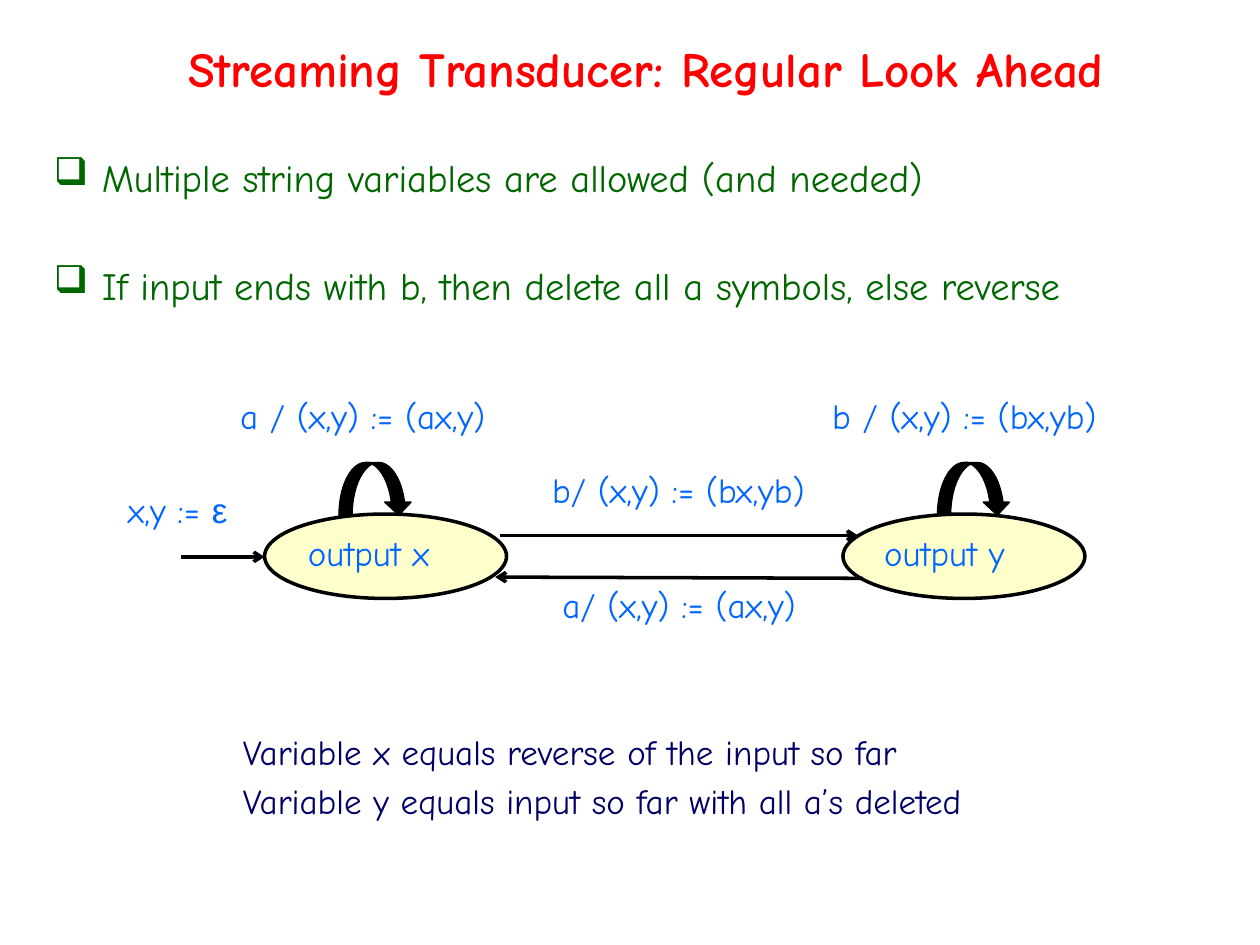
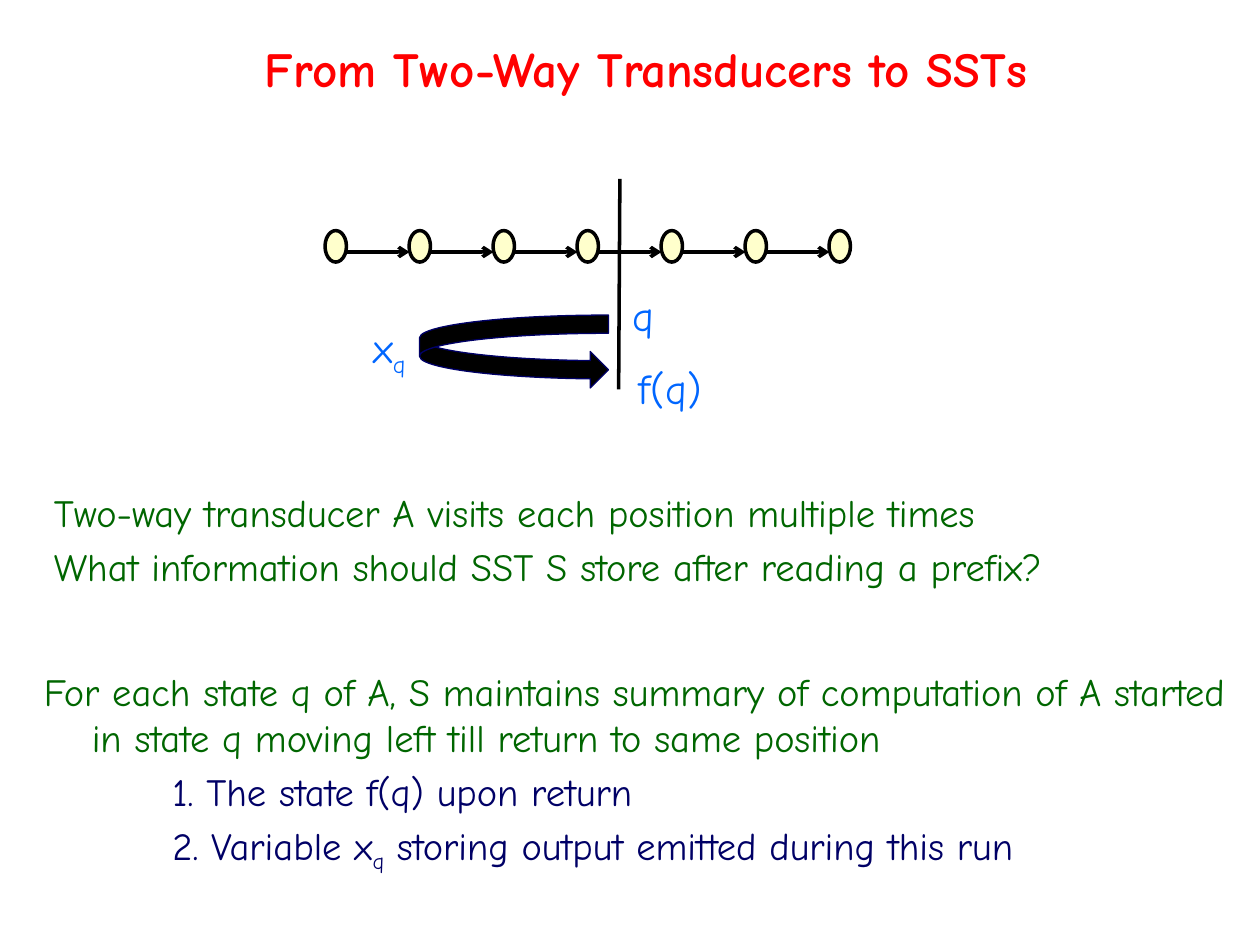
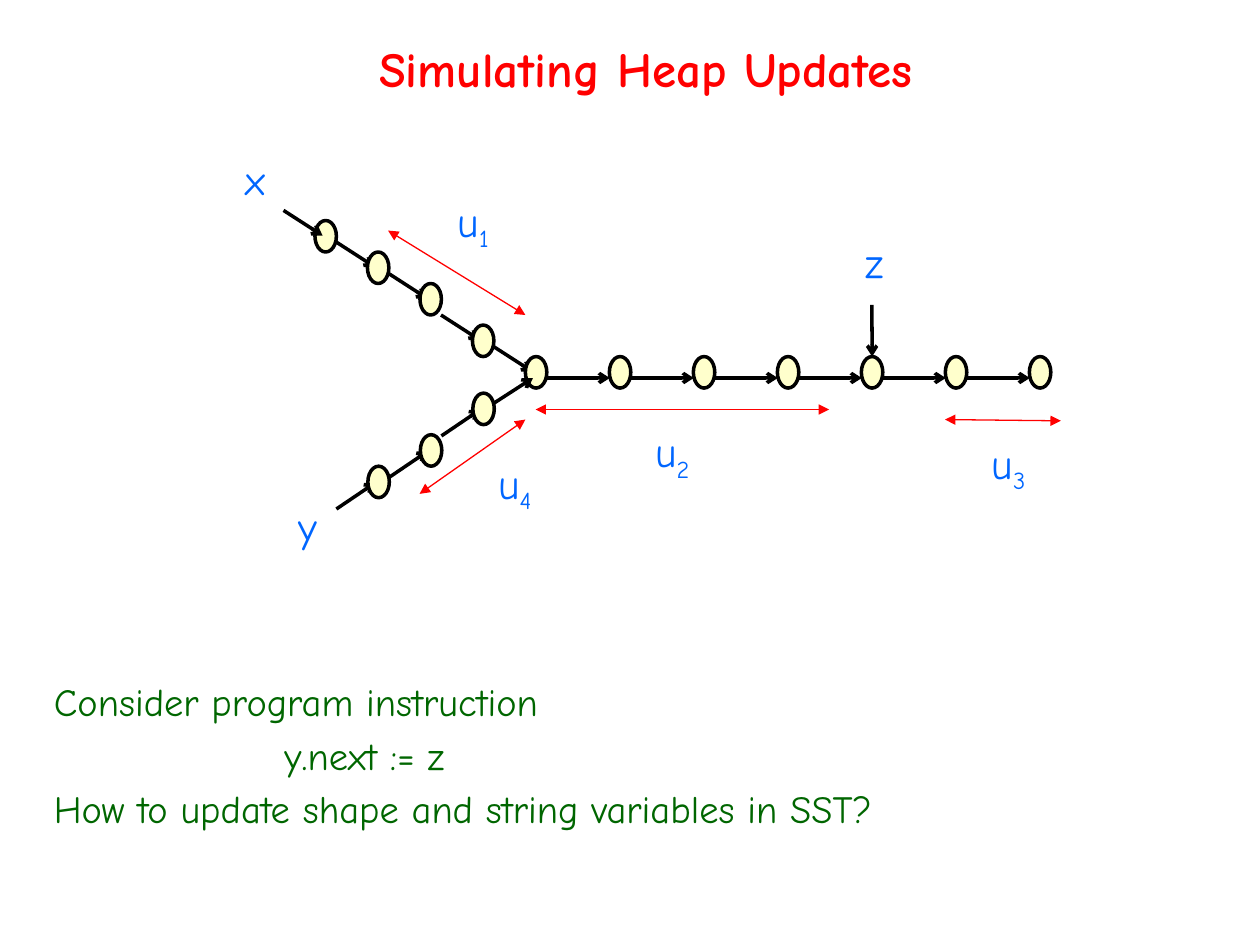
from dataclasses import dataclass

from lxml.etree import SubElement
from pptx import Presentation
from pptx.dml.color import RGBColor
from pptx.enum.shapes import MSO_CONNECTOR, MSO_SHAPE
from pptx.enum.text import MSO_ANCHOR, MSO_AUTO_SIZE, PP_ALIGN
from pptx.oxml.ns import qn
from pptx.util import Inches, Pt


@dataclass(frozen=True)
class Theme:
    font: str = "Comic Neue"
    greek: str = "Arial"
    red: RGBColor = RGBColor(0xFF, 0, 0)
    green: RGBColor = RGBColor(0, 0x66, 0)
    blue: RGBColor = RGBColor(0, 0x66, 0xFF)
    navy: RGBColor = RGBColor(0, 0, 0x66)
    black: RGBColor = RGBColor(0, 0, 0)
    cream: RGBColor = RGBColor(0xFF, 0xFF, 0xCC)
    title: int = 28
    large: int = 24
    body: int = 22
    small: int = 20
    thick: float = 2
    thin: float = 0.75


theme = Theme()


def add_text(slide, box, lines, size, color, label=False):
    frame = slide.shapes.add_textbox(*map(Inches, box)).text_frame
    frame.word_wrap = not label
    for count, line in enumerate(lines):
        para = frame.paragraphs[0] if count == 0 else frame.add_paragraph()
        if label:
            para.alignment = PP_ALIGN.CENTER
        else:
            para.space_before = Pt(size * 0.2)
            props = para._p.get_or_add_pPr()
            props.set("marL", str(Inches(0.38)))
            props.set("indent", str(Inches(-0.38)))
        for piece in line.split("|"):
            run = para.add_run()
            run.text = piece.lstrip("_")
            run.font.name = theme.greek if piece == "ε" else theme.font
            run.font.size = Pt(size)
            run.font.color.rgb = color
            if piece.startswith("_"):
                run.font._element.set("baseline", "-25000")
    return frame.paragraphs


def add_link(slide, start, end, color=theme.black, width=theme.thick, head=None, tail="arrow"):
    link = slide.shapes.add_connector(MSO_CONNECTOR.STRAIGHT, *map(Inches, (*start, *end)))
    link.line.color.rgb = color
    link.line.width = Pt(width)
    props = link._element.spPr
    for tag, tip in (("a:headEnd", head), ("a:tailEnd", tail)):
        if tip:
            SubElement(props.find(qn("a:ln")), qn(tag)).set("type", tip)
    SubElement(props, qn("a:effectLst"))
    return link


deck = Presentation()
deck.slide_width, deck.slide_height = Inches(10), Inches(7.5)

slides = []
for text in (
    "Streaming Transducer: Regular Look Ahead",
    "From Two-Way Transducers to SSTs",
    "Simulating Heap Updates",
):
    slide = deck.slides.add_slide(deck.slide_layouts[5])
    title = slide.shapes.title
    title.left, title.top = Inches(0.25), Inches(0.25)
    title.width, title.height = Inches(9.75), Inches(0.58)
    frame = title.text_frame
    frame.text = text
    frame.auto_size = MSO_AUTO_SIZE.NONE
    frame.vertical_anchor = MSO_ANCHOR.MIDDLE
    para = frame.paragraphs[0]
    para.alignment = PP_ALIGN.CENTER
    font = para.runs[0].font
    font.name, font.size, font.bold = theme.font, Pt(theme.title), True
    font.color.rgb = theme.red
    slides.append(slide)
look, sweep, heap = slides

nodes = []
bends = []

for left in (2.1, 6.69):
    box = map(Inches, (left, 4.08, 1.92, 0.67))
    nodes.append(look.shapes.add_shape(MSO_SHAPE.OVAL, *box))
    box = map(Inches, (left + 0.59 if left < 5 else left + 0.75, 3.67, 0.58, 0.42))
    bend = look.shapes.add_shape(MSO_SHAPE.CURVED_UP_ARROW, *box)
    bends.append((bend, ("flipV",), theme.black))

for start, end in (
    ((1.44, 4.42), (2.1, 4.42)),
    ((3.97, 4.25), (6.81, 4.25)),
    ((6.85, 4.59), (3.93, 4.58)),
):
    add_link(look, start, end)

for left, top, width, text in (
    (2.28, 4.17, 1.29, "output x"),
    (6.86, 4.17, 1.27, "output y"),
    (1.7, 3.08, 2.36, "a / (x,y) := (ax,y)"),
    (6.37, 3.08, 2.57, "b / (x,y) := (bx,yb)"),
    (0.86, 3.83, 1.1, "x,y := |ε"),
    (4.14, 3.67, 2.49, "b/ (x,y) := (bx,yb)"),
    (4.25, 4.58, 2.28, "a/ (x,y) := (ax,y)"),
):
    add_text(look, (left, top, width, 0.43), [text], theme.small, theme.blue, True)

points = add_text(look, (0.33, 1.17, 9.67, 2.33), [
    "Multiple string variables are allowed (and needed)",
    "If input ends with b, then delete all a symbols, else reverse",
], theme.body, theme.green)
for para in points:
    SubElement(para._p.get_or_add_pPr(), qn("a:buChar")).set("char", "❑")
points[1].space_before = Pt(35.3)

add_text(look, (1.83, 5.75, 6.83, 1), [
    "Variable x equals reverse of the input so far",
    "Variable y equals input so far with all a’s deleted",
], theme.small, theme.navy)

step = 5 / 12
upper = [(2.5 + step * i, top) for i, top in enumerate((1.75, 2, 2.25, 2.58, 2.83))]
lower = [(2.92 + step * i, top) for i, top in enumerate((3.7, 3.45, 3.12))]
for left, top in upper[1:]:
    add_link(heap, (left - 0.25, top - 0.08), (left + 0.06, top + 0.12))
for left, top in lower:
    add_link(heap, (left - 0.25, top + 0.34), (left + 0.06, top + 0.13))
for left, top in upper[:-1] + lower:
    box = map(Inches, (left, top, 0.17, 0.25))
    nodes.append(heap.shapes.add_shape(MSO_SHAPE.OVAL, *box))

for slide, first, top in ((sweep, 2.58, 1.83), (heap, 4.17, 2.83)):
    spots = [first + i * 2 / 3 for i in range(7)]
    for left in spots[:-1]:
        add_link(slide, (left + 0.17, top + 0.17), (left + 0.67, top + 0.17))
    for left in spots:
        box = map(Inches, (left, top, 0.17, 0.25))
        nodes.append(slide.shapes.add_shape(MSO_SHAPE.OVAL, *box))

add_link(sweep, (4.92, 1.42), (4.91, 3.09), tail=None)
box = map(Inches, (3.79, 2.04, 0.58, 1.5))
bend = sweep.shapes.add_shape(MSO_SHAPE.CURVED_UP_ARROW, *box)
bend.rotation = 270
bends.append((bend, ("flipH", "flipV"), theme.navy))

add_text(sweep, (0.33, 3.83, 9.5, 1.08), [
    "Two-way transducer A visits each position multiple times",
    "What information should SST S store after reading a prefix?",
], theme.body, theme.green)
steps = add_text(sweep, (0.25, 5.25, 9.75, 1.92), [
    "For each state q of A, S maintains summary of computation of A started "
    "in state q moving left till return to same position",
    "1. The state f(q) upon return",
    "2. Variable x|_q| storing output emitted during this run",
], theme.body, theme.green)
for para in steps[1:]:
    para._p.pPr.set("marL", str(Inches(1.02)))
    para._p.pPr.set("indent", "0")
    for run in para.runs:
        run.font.color.rgb = theme.navy

add_link(heap, (2.25, 1.67), (2.56, 1.87))
add_link(heap, (3.92, 3.2), (4.23, 3))
add_link(heap, (6.92, 2.42), (6.92, 2.83)).end_connect(nodes[-3], 0)
for start, end in (
    ((3.08, 1.83), (4.17, 2.5)),
    ((4.25, 3.25), (6.58, 3.25)),
    ((7.5, 3.33), (8.42, 3.34)),
    ((3.33, 3.92), (4.17, 3.33)),
):
    add_link(heap, start, end, theme.red, theme.thin, "triangle", "triangle")

code = add_text(heap, (0.33, 5.33, 9.67, 1.83), [
    "Consider program instruction",
    "y.next := z",
    "How to update shape and string variables in SST?",
], theme.body, theme.green)[1]
code._p.pPr.set("marL", str(Inches(1.83)))
code._p.pPr.set("indent", "0")

for slide, left, top, width, text in (
    (sweep, 4.92, 2.25, 0.38, "q"),
    (sweep, 4.92, 2.83, 0.8, "f(q)"),
    (sweep, 2.83, 2.5, 0.52, "x|_q"),
    (heap, 1.83, 1.17, 0.4, "x"),
    (heap, 2.25, 3.92, 0.38, "y"),
    (heap, 6.75, 1.83, 0.38, "z"),
    (heap, 3.5, 1.5, 0.51, "u|_1"),
    (heap, 5.08, 3.33, 0.51, "u|_2"),
    (heap, 7.75, 3.42, 0.51, "u|_3"),
    (heap, 3.83, 3.58, 0.51, "u|_4"),
):
    add_text(slide, (left, top, width, 0.51), [text], theme.large, theme.blue, True)

for node in nodes:
    node.shadow.inherit = False
    node.fill.solid()
    node.fill.fore_color.rgb = theme.cream
    node.line.color.rgb = theme.black
    node.line.width = Pt(theme.thick)

for bend, flips, edge in bends:
    bend.shadow.inherit = False
    bend.fill.solid()
    bend.fill.fore_color.rgb = theme.black
    bend.line.color.rgb = edge
    bend.line.width = Pt(theme.thin)
    for flip in flips:
        bend._element.spPr.find(qn("a:xfrm")).set(flip, "1")

deck.save("out.pptx")
